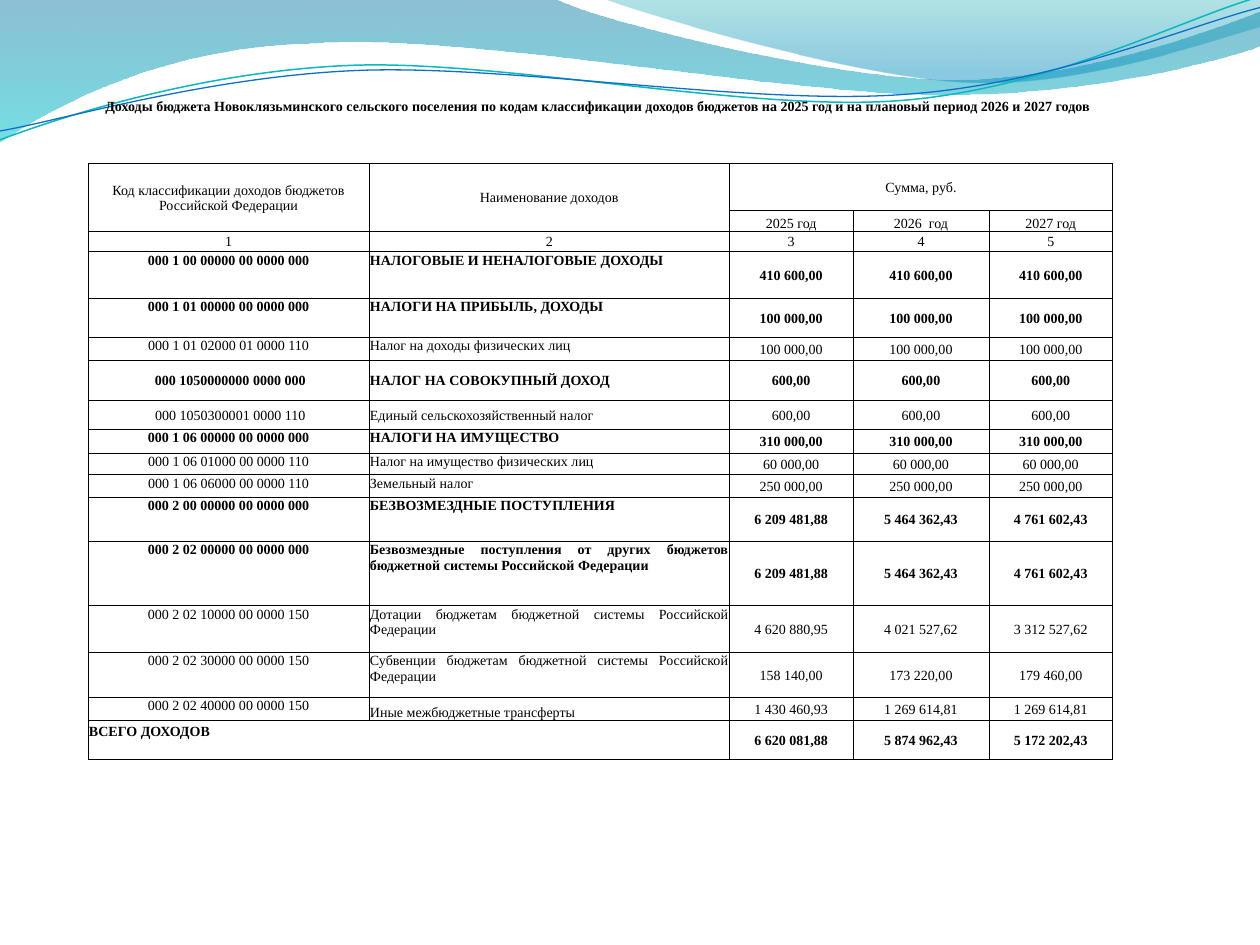
import lxml.etree
import pptx
import pptx.dml.color
import pptx.enum.text
import pptx.oxml.ns
import pptx.util

inch, point = pptx.util.Inches, pptx.util.Pt
qn = pptx.oxml.ns.qn
rgb = pptx.dml.color.RGBColor.from_string
left, mid, just = (pptx.enum.text.PP_ALIGN.LEFT, pptx.enum.text.PP_ALIGN.CENTER,
                   pptx.enum.text.PP_ALIGN.JUSTIFY)
top, even, low = (pptx.enum.text.MSO_ANCHOR.TOP, pptx.enum.text.MSO_ANCHOR.MIDDLE,
                  pptx.enum.text.MSO_ANCHOR.BOTTOM)
hues = {"ink": "000000", "paper": "FFFFFF", "deep": "0074A1", "aqua": "00C6CF",
        "teal": "00A1A9", "sky": "008BBF", "green": "0AB8BF", "blue": "0F6FC6"}

deck = pptx.Presentation()
deck.slide_width, deck.slide_height = inch(10), inch(7.5)
page = deck.slides.add_slide(deck.slide_layouts[6])


def put(cell, text, bold=False, align=mid, anchor=even, size=8):
    cell.vertical_anchor = anchor
    para = cell.text_frame.paragraphs[0]
    para.alignment = align
    run = para.add_run()
    run.text = text
    run.font.name, run.font.size, run.font.bold = "Times New Roman", point(size), bold
    run.font.color.rgb = rgb(hues["ink"])


def wave(start, parts, close):
    """Trace lines (2 numbers) and Bezier curves (6 numbers), in inches."""
    pen = page.shapes.build_freeform(inch(start[0]), inch(start[1]), scale=1.0)
    knots = [(inch(p[n]), inch(p[n + 1])) for p in parts for n in range(0, len(p), 2)]
    pen.add_line_segments(knots, close=close)
    shape = pen.convert_to_shape()
    shape.shadow.inherit = False
    # Join each three knots of a curve into one Bezier segment
    legs = iter(list(shape._element.spPr.iter(qn("a:lnTo"))))
    for part in parts:
        first = next(legs)
        if len(part) == 6:
            first.tag = qn("a:cubicBezTo")
            for _ in range(2):
                leg = next(legs)
                first.append(leg[0])
                leg.getparent().remove(leg)
    return shape


# Shaded waves: start, parts, and stops of place, hue and opacity
bands = [
    ((0, 0), [(4.4, -0.01), (4.76, 0.17, 6.64, 0.63, 7.58, 0.63),
              (8.53, 0.63, 9.58, 0.26, 10, 0.09), (10.01, 0.36),
              (9.83, 0.44, 8.7, 0.76, 7.46, 0.75), (6.22, 0.75, 3.82, 0.28, 2.57, 0.34),
              (1.29, 0.36, 0.46, 0.83, -0.01, 1.13)],
     [(0, "deep", 45), (1, "aqua", 55)]),
    ((4.79, -0.01), [(5.09, 0.11, 6.82, 0.62, 7.69, 0.65),
                     (8.56, 0.69, 9.61, 0.32, 10, 0.21), (10, 0)],
     [(0, "teal", 30), (0.8, "sky", 45)]),
]
for start, parts, stops in bands:
    band = wave(start, parts, True)
    band.line.fill.background()
    band.fill.gradient()
    band.fill.gradient_angle = 270
    for stop, (place, hue, _) in zip(band.fill.gradient_stops, stops):
        stop.position = place
        stop.color.rgb = rgb(hues[hue])
    for tint, (_, _, share) in zip(band._element.spPr.iter(qn("a:srgbClr")), stops):
        lxml.etree.SubElement(tint, qn("a:alpha")).set("val", str(share * 1000))

# Thin wave lines
lines = [
    ((0, 1.11), [(0.48, 0.93, 1.58, 0.57, 2.77, 0.52), (3.95, 0.47, 5.93, 0.89, 7.13, 0.8),
                 (8.33, 0.71, 9.38, 0.15, 9.98, -0.02)], "green", 0.85),
    ((0, 1.04), [(0.47, 0.96, 1.64, 0.61, 2.83, 0.56), (4.03, 0.51, 5.97, 0.84, 7.17, 0.75),
                 (8.36, 0.67, 9.41, 0.21, 10, 0.06)], "blue", 0.75),
]
for start, parts, hue, width in lines:
    curve = wave(start, parts, False)
    curve.fill.background()
    curve.line.color.rgb = rgb(hues[hue])
    curve.line.width = point(width)

# Table grid
cols = [2.23, 2.86, 0.98, 1.08, 0.98]
rows = [0.36, 0.16, 0.37, 0.17, 0.16, 0.37, 0.31, 0.18, 0.32, 0.23,
        0.19, 0.17, 0.18, 0.35, 0.51, 0.37, 0.36, 0.18, 0.31]
grid = page.shapes.add_table(len(rows), len(cols), inch(0.7), inch(0.78),
                             inch(sum(cols)), inch(sum(rows))).table
grid.first_row = grid.horz_banding = False
for col, width in zip(grid.columns, cols):
    col.width = inch(width)
for row, height in zip(grid.rows, rows):
    row.height = inch(height)

# Margins, borders and fills; the title row and the gap row have no frame
white = {(r, c) for r in range(8, 13) for c in (2, 3, 4)} | {(16, c) for c in range(5)}
for r in range(len(rows)):
    for c in range(len(cols)):
        cell = grid.cell(r, c)
        cell.margin_left = cell.margin_right = cell.margin_top = point(0.45)
        cell.margin_bottom = 0
        cell.text_frame.paragraphs[0]._p.get_or_add_endParaRPr().set("sz", "800")
        if (r, c) in white:
            cell.fill.solid()
            cell.fill.fore_color.rgb = rgb(hues["paper"])
        else:
            cell.fill.background()
        for n, side in enumerate("LRTB"):
            edge = lxml.etree.Element(qn("a:ln" + side), w="6350")
            cell._tc.get_or_add_tcPr().insert(n, edge)
            if r > 1 or (r == 1 and side == "B"):
                ink = lxml.etree.SubElement(edge, qn("a:solidFill"))
                lxml.etree.SubElement(ink, qn("a:srgbClr")).set("val", hues["ink"])
            else:
                lxml.etree.SubElement(edge, qn("a:noFill"))

# Merged cells
for r, c, end, far in [(0, 0, 0, 4), (1, 0, 1, 2), (2, 0, 3, 0),
                       (2, 1, 3, 1), (2, 2, 2, 4), (18, 0, 18, 1)]:
    grid.cell(r, c).merge(grid.cell(end, far))

# Title and headings
put(grid.cell(0, 0), "Доходы бюджета Новоклязьминского сельского поселения по кодам "
    "классификации доходов бюджетов на 2025 год и на плановый период 2026 и 2027 годов ",
    bold=True, anchor=top)
heads = ["Код классификации доходов бюджетов Российской Федерации",
         "Наименование доходов", "Сумма, руб."]
for c, head in enumerate(heads):
    put(grid.cell(2, c), head)
for c, year in enumerate(["2025 год", "2026  год", "2027 год"], 2):
    put(grid.cell(3, c), year, anchor=low)
for c in range(5):
    put(grid.cell(4, c), str(c + 1))

# Income: code, name, bold, name alignment, anchors of code and name, sums
items = [
    ("000 1 00 00000 00 0000 000", "НАЛОГОВЫЕ И НЕНАЛОГОВЫЕ ДОХОДЫ", True, left, top, top,
     ["410 600,00"] * 3),
    ("000 1 01 00000 00 0000 000", "НАЛОГИ НА ПРИБЫЛЬ, ДОХОДЫ", True, left, top, top,
     ["100 000,00"] * 3),
    ("000 1 01 02000 01 0000 110", "Налог на доходы физических лиц", False, just, top, top,
     ["100 000,00"] * 3),
    (" 000 1050000000 0000 000", "НАЛОГ НА СОВОКУПНЫЙ ДОХОД", True, left, even, even,
     ["600,00"] * 3),
    (" 000 1050300001 0000 110", "Единый сельскохозяйственный налог", False, left, even, even,
     ["600,00"] * 3),
    ("000 1 06 00000 00 0000 000", "НАЛОГИ НА ИМУЩЕСТВО", True, just, top, top,
     ["310 000,00"] * 3),
    ("000 1 06 01000 00 0000 110", "Налог на имущество физических лиц", False, just, top, top,
     ["60 000,00"] * 3),
    ("000 1 06 06000 00 0000 110", "Земельный налог", False, just, top, top,
     ["250 000,00"] * 3),
    ("000 2 00 00000 00 0000 000", "БЕЗВОЗМЕЗДНЫЕ ПОСТУПЛЕНИЯ ", True, just, top, top,
     ["6 209 481,88", "5 464 362,43", "4 761 602,43"]),
    ("000 2 02 00000 00 0000 000", "Безвозмездные поступления от других бюджетов бюджетной "
     "системы Российской Федерации", True, just, top, top,
     ["6 209 481,88", "5 464 362,43", "4 761 602,43"]),
    ("000 2 02 10000 00 0000 150", "Дотации бюджетам бюджетной системы Российской Федерации ",
     False, just, top, top, ["4 620 880,95", "4 021 527,62", "3 312 527,62"]),
    ("000 2 02 30000 00 0000 150", "Субвенции бюджетам бюджетной системы Российской Федерации ",
     False, just, top, top, ["158 140,00", "173 220,00", "179 460,00"]),
    ("000 2 02 40000 00 0000 150", "Иные межбюджетные трансферты", False, left, top, low,
     ["1 430 460,93", "1 269 614,81", "1 269 614,81"]),
]
for r, (code, name, bold, align, high, seat, sums) in enumerate(items, 5):
    put(grid.cell(r, 0), code, bold=bold, anchor=high)
    put(grid.cell(r, 1), name, bold=bold, align=align, anchor=seat)
    for c, value in enumerate(sums, 2):
        put(grid.cell(r, c), value, bold=bold)

# Total
total = grid.cell(18, 0)
total.margin_top = inch(0.03)
put(total, "ВСЕГО ДОХОДОВ", bold=True, align=left, anchor=top)
for c, value in enumerate(["6 620 081,88", "5 874 962,43", "5 172 202,43"], 2):
    put(grid.cell(18, c), value, bold=True)

deck.save("out.pptx")
